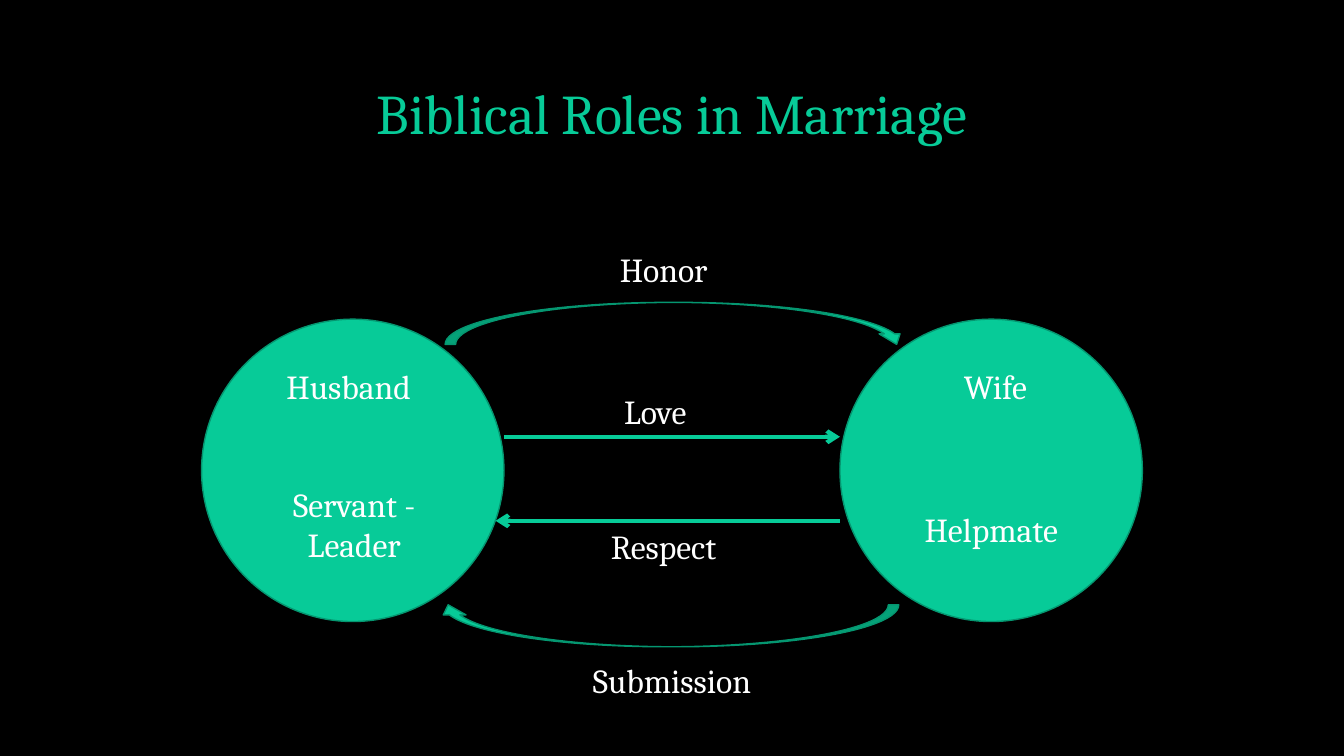
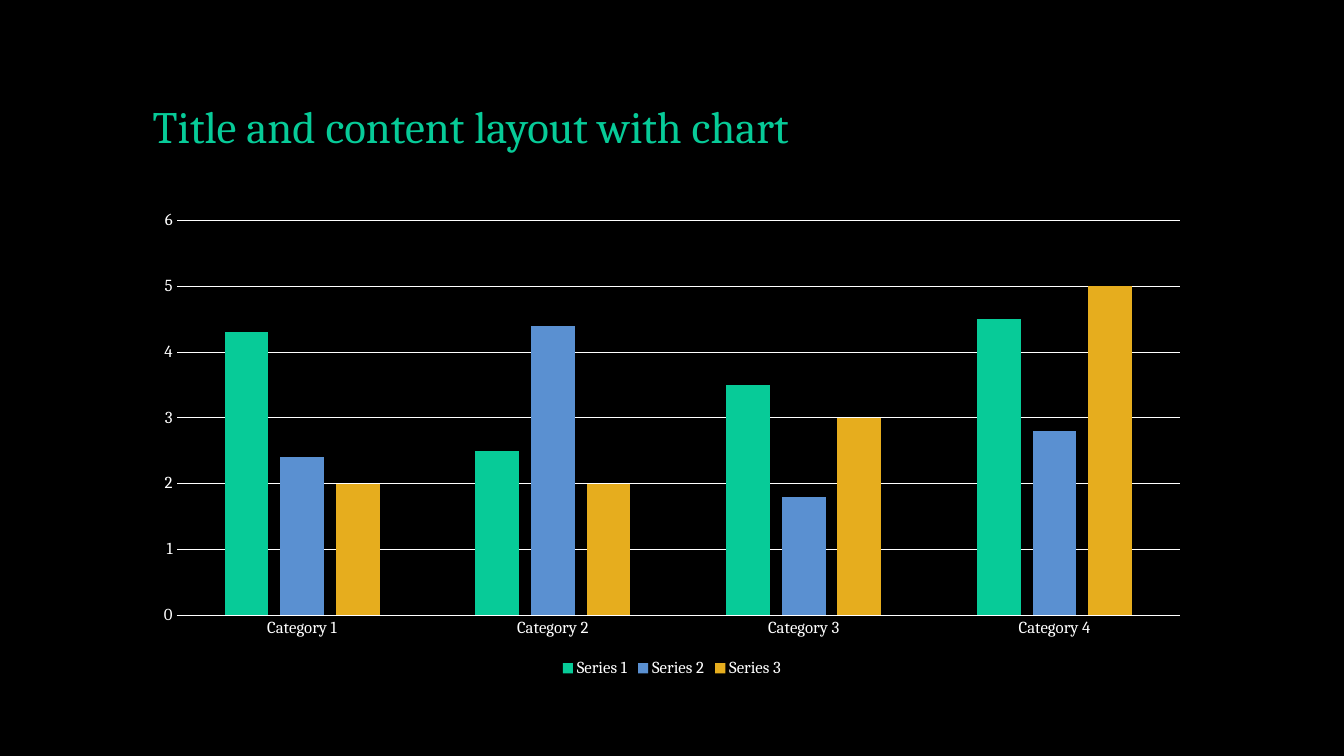
from dataclasses import dataclass

from lxml.etree import SubElement
from pptx import Presentation
from pptx.chart.data import CategoryChartData
from pptx.dml.color import RGBColor
from pptx.enum.chart import XL_CHART_TYPE as ChartType, XL_LEGEND_POSITION as LegendSpot, XL_TICK_MARK as Tick
from pptx.enum.shapes import MSO_CONNECTOR as Connector, MSO_SHAPE as Shape
from pptx.enum.text import MSO_ANCHOR as Anchor, PP_ALIGN as Align
from pptx.oxml.ns import qn
from pptx.util import Pt


@dataclass(frozen=True)
class Theme:
    font: str = "Cambria"
    back: str = "000000"
    text: str = "FFFFFF"
    accent: str = "07CB98"
    edge: str = "059670"
    blue: str = "5A90D1"
    gold: str = "E6AD1E"
    big_title: int = 40
    title: int = 32
    label: int = 24
    chart: int = 12


THEME = Theme()

ROLES_TITLE = "Biblical Roles in Marriage"
CIRCLE_TOP, CIRCLE_SIZE = 228, 216
CIRCLE_LEFTS = (144, 600)
LABELS = [
    ("Husband", 249, 258, 140),
    ("Wife", 711, 258, 140),
    ("Servant - Leader", 253, 342, 120),
    ("Helpmate", 708, 360, 140),
    ("Love", 468, 276, 84),
    ("Respect", 474, 372, 108),
    ("Honor", 474, 174, 84),
    ("Submission", 480, 468, 144),
]
STRAIGHT_ARROWS = [(360, 600, 312), (600, 354, 372)]
CURVED_ARROWS = [
    (318, 216, 0, (0.25, 0.5, 0.25)),
    (312, 432, 180, (0.25, 0.54, 0.24)),
]

CHART_TITLE = "Title and content layout with chart"
CATEGORIES = ["Category 1", "Category 2", "Category 3", "Category 4"]
SERIES = [
    ("Series 1", (4.3, 2.5, 3.5, 4.5), THEME.accent),
    ("Series 2", (2.4, 4.4, 1.8, 2.8), THEME.blue),
    ("Series 3", (2, 2, 3, 5), THEME.gold),
]


def color(code):
    return RGBColor.from_string(code)


def paint(fill, code):
    fill.solid()
    fill.fore_color.rgb = color(code)


def stroke(line, code, width):
    paint(line.fill, code)
    line.width = Pt(width)


def style_font(font, size, code=THEME.text):
    font.name = THEME.font
    font.size = Pt(size)
    font.color.rgb = color(code)


def add_text(page, text, left, top, width, height, *, size=THEME.label,
             code=THEME.text, align=Align.CENTER, anchor=Anchor.TOP, spacing=1.0):
    box = page.shapes.add_textbox(Pt(left), Pt(top), Pt(width), Pt(height))
    frame = box.text_frame
    frame.word_wrap = True
    frame.vertical_anchor = anchor
    para = frame.paragraphs[0]
    para.alignment = align
    para.line_spacing = spacing
    span = para.add_run()
    span.text = text
    style_font(span.font, size, code)


def add_title(page, text, left, top, width, height, **style):
    add_text(page, text, left, top, width, height, code=THEME.accent,
             anchor=Anchor.BOTTOM, spacing=0.9, **style)


def add_figure(page, kind, left, top, width, height):
    figure = page.shapes.add_shape(kind, Pt(left), Pt(top), Pt(width), Pt(height))
    figure.shadow.inherit = False
    paint(figure.fill, THEME.accent)
    stroke(figure.line, THEME.edge, 1)
    return figure


def add_arrow(page, start, end, height):
    arrow = page.shapes.add_connector(
        Connector.STRAIGHT, Pt(start), Pt(height), Pt(end), Pt(height))
    stroke(arrow.line, THEME.accent, 3)
    properties = arrow._element.spPr
    SubElement(properties.find(qn("a:ln")), qn("a:tailEnd"), type="arrow")
    SubElement(properties, qn("a:effectLst"))


def build_roles(page):
    add_title(page, ROLES_TITLE, 156, 55.5, 648, 52.5, size=THEME.big_title)
    for left in CIRCLE_LEFTS:
        add_figure(page, Shape.OVAL, left, CIRCLE_TOP, CIRCLE_SIZE, CIRCLE_SIZE)
    for start, end, height in STRAIGHT_ARROWS:
        add_arrow(page, start, end, height)
    for left, top, turn, bends in CURVED_ARROWS:
        arrow = add_figure(page, Shape.CURVED_DOWN_ARROW, left, top, 330, 30)
        arrow.rotation = turn
        for index, bend in enumerate(bends):
            arrow.adjustments[index] = bend
    for text, center, top, width in LABELS:
        add_text(page, text, center - width / 2, top, width, 36)


def build_chart(page):
    add_title(page, CHART_TITLE, 102, 28.5, 756, 84.5, size=THEME.title, align=Align.LEFT)
    data = CategoryChartData()
    data.categories = CATEGORIES
    for name, values, _ in SERIES:
        data.add_series(name, values)
    chart = page.shapes.add_chart(
        ChartType.COLUMN_CLUSTERED, Pt(102), Pt(144), Pt(756), Pt(343), data).chart
    chart.has_title = False
    style_font(chart.font, THEME.chart)
    chart.has_legend = True
    chart.legend.position = LegendSpot.BOTTOM
    chart.legend.include_in_layout = False
    style_font(chart.legend.font, THEME.chart)

    plot = chart.plots[0]
    plot.vary_by_categories = False
    plot.gap_width = 219
    plot.overlap = -27
    for series, (_, _, code) in zip(plot.series, SERIES):
        paint(series.format.fill, code)

    categories, values = chart.category_axis, chart.value_axis
    for axis in (categories, values):
        axis.major_tick_mark = axis.minor_tick_mark = Tick.NONE
        style_font(axis.tick_labels.font, THEME.chart)
    stroke(categories.format.line, THEME.text, 0.75)
    values.minimum_scale, values.maximum_scale, values.major_unit = 0, 6, 1
    values.format.line.fill.background()
    stroke(values.major_gridlines.format.line, THEME.text, 0.75)


def main():
    deck = Presentation()
    deck.slide_width, deck.slide_height = Pt(960), Pt(540)
    paint(deck.slide_master.background.fill, THEME.back)
    for build in (build_roles, build_chart):
        build(deck.slides.add_slide(deck.slide_layouts[6]))
    deck.save("out.pptx")


if __name__ == "__main__":
    main()
